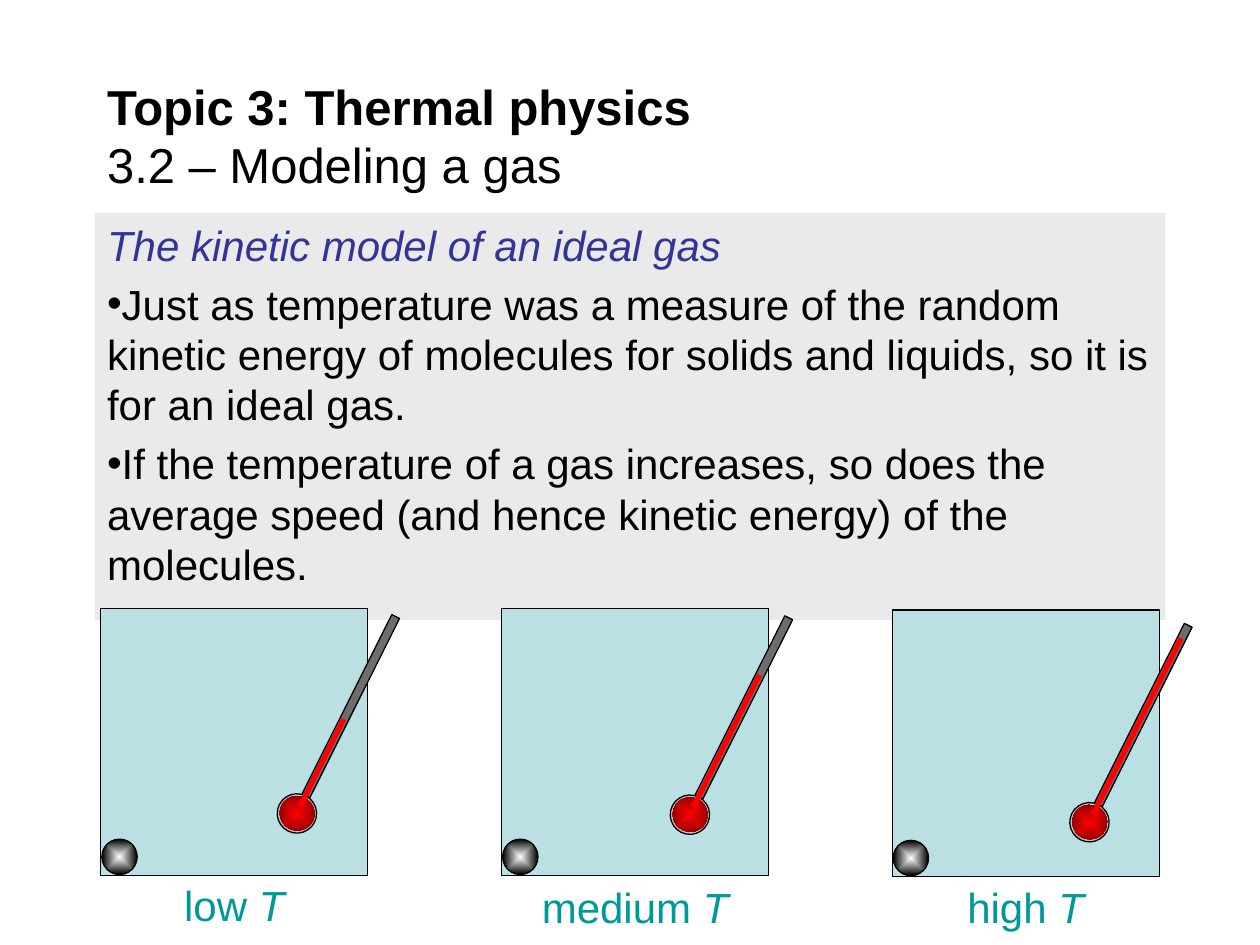
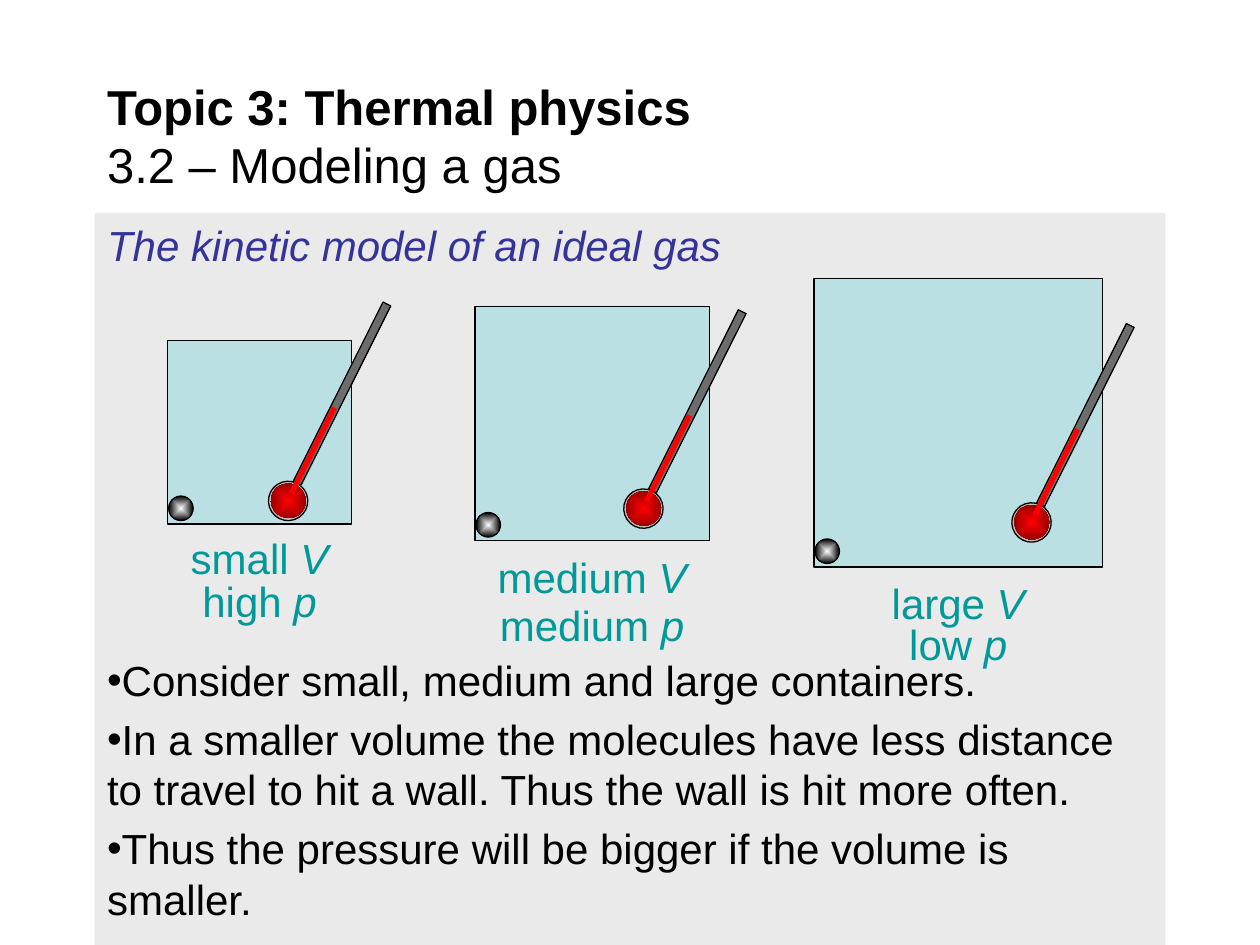
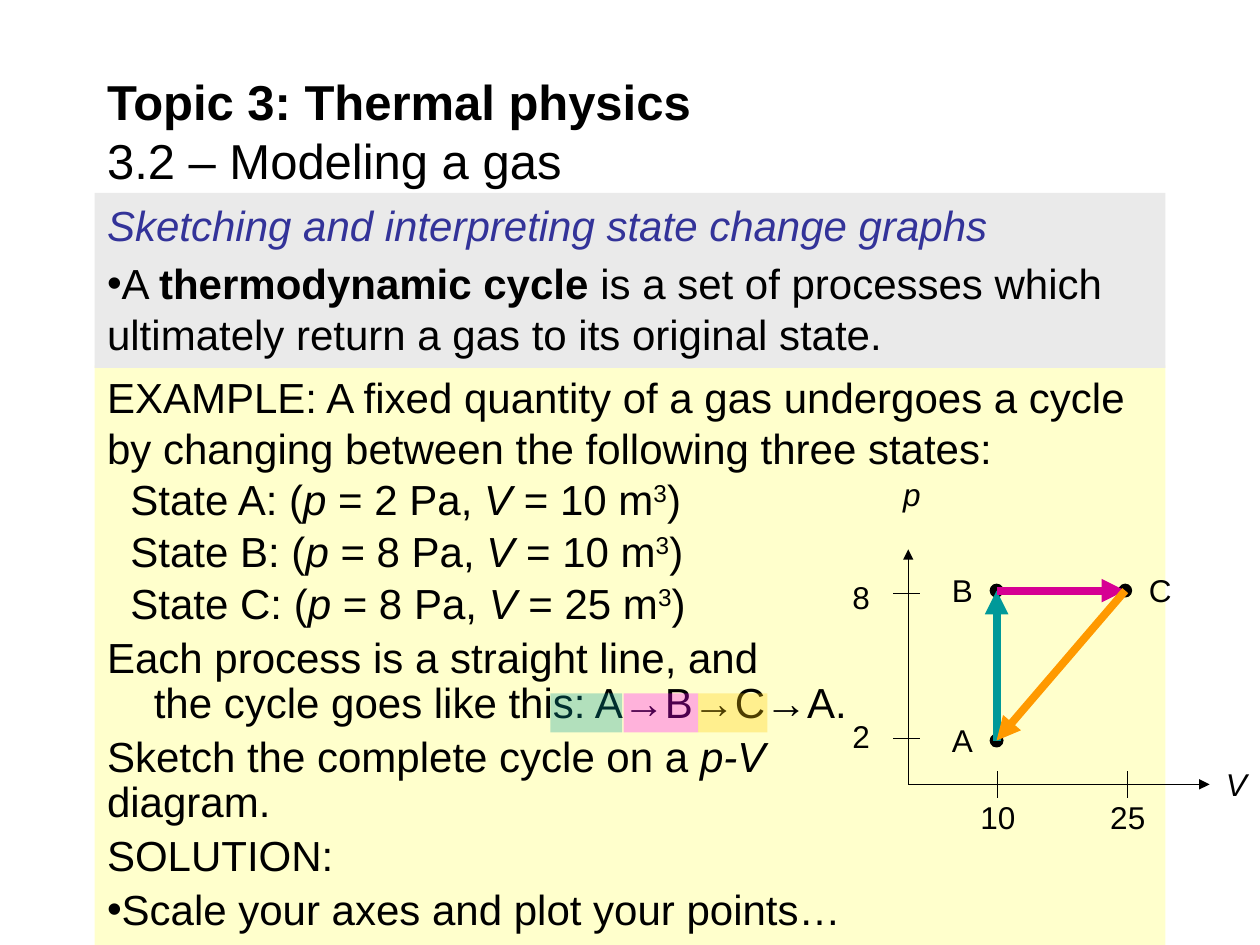
from dataclasses import dataclass

from lxml import etree
from pptx import Presentation
from pptx.dml.color import RGBColor
from pptx.enum.shapes import MSO_CONNECTOR, MSO_SHAPE
from pptx.enum.text import MSO_ANCHOR, MSO_AUTO_SIZE, PP_ALIGN
from pptx.oxml.ns import qn
from pptx.util import Pt

RECTANGLE = MSO_SHAPE.RECTANGLE
OVAL = MSO_SHAPE.OVAL
STRAIGHT = MSO_CONNECTOR.STRAIGHT
LEFT, CENTER = PP_ALIGN.LEFT, PP_ALIGN.CENTER
TOP, MIDDLE = MSO_ANCHOR.TOP, MSO_ANCHOR.MIDDLE
FIXED, GROW = MSO_AUTO_SIZE.NONE, MSO_AUTO_SIZE.SHAPE_TO_FIT_TEXT

BLACK = RGBColor(0x00, 0x00, 0x00)
WHITE = RGBColor(0xFF, 0xFF, 0xFF)
GREY = RGBColor(0xEA, 0xEA, 0xEA)
STEEL = RGBColor(0x6C, 0x6C, 0x6C)
NAVY = RGBColor(0x33, 0x33, 0x99)
TEAL = RGBColor(0x00, 0x99, 0x99)
GAS = RGBColor(0xBB, 0xE0, 0xE3)
RED = RGBColor(0xFF, 0x00, 0x00)
DARK_RED = RGBColor(0x76, 0x00, 0x00)
CREAM = RGBColor(0xFF, 0xFF, 0xCC)
PINK = RGBColor(0xD6, 0x00, 0x93)
ORANGE = RGBColor(0xFF, 0x99, 0x00)
MAGENTA = RGBColor(0xFF, 0x00, 0xFF)
GOLD = RGBColor(0xFF, 0xCC, 0x00)

FONT = "Arial"
BREAK = "\v"
CONTENT_LAYOUT, TWO_CONTENT_LAYOUT = 1, 3
MARGIN, BODY_WIDTH = 54, 612
TITLE_TOP = 41.8
BODY_TOP = 121.7
TILT = 26.6


@dataclass
class Line:
    spans: list
    size: float = 24
    color: RGBColor = BLACK
    align: PP_ALIGN = LEFT
    bullet: bool = False
    margin: float = 0
    indent: float = 0
    before: float = None
    spacing: float = None


def heading(text):
    return Line([(text, "i")], color=NAVY)


def bullet(*spans, **options):
    return Line(list(spans), bullet=True, **options)


def add_span(para, text, style, line):
    span = para.add_run()
    span.text = text
    font = span.font
    font.name, font.size, font.color.rgb = FONT, Pt(line.size), line.color
    font.bold, font.italic = "b" in style, "i" in style
    if "^" in style:
        font._element.set("baseline", "30000")


def write(box, lines):
    frame = box.text_frame
    for number, line in enumerate(lines):
        para = frame.add_paragraph() if number else frame.paragraphs[0]
        para.alignment = line.align
        if line.before is not None:
            para.space_before = Pt(line.before)
        if line.spacing:
            para.line_spacing = line.spacing
        props = para._p.get_or_add_pPr()
        props.set("marL", str(Pt(line.margin)))
        props.set("indent", str(Pt(line.indent)))
        if line.bullet:
            etree.SubElement(props, qn("a:buChar")).set("char", "•")
        else:
            etree.SubElement(props, qn("a:buNone"))
        for item in line.spans:
            text, style = (item, "") if isinstance(item, str) else item
            if text == BREAK:
                para.add_line_break()
            else:
                add_span(para, text, style, line)
        for line_break in para._p.findall(qn("a:br")):
            etree.SubElement(line_break, qn("a:rPr")).set("sz", str(line.size * 100))


def place(box, left, top, width, height):
    box.left, box.top, box.width, box.height = Pt(left), Pt(top), Pt(width), Pt(height)


def add_page(deck, layout, title_height=70.6):
    page = deck.slides.add_slide(deck.slide_layouts[layout])
    title = page.shapes.title
    place(title, MARGIN, TITLE_TOP, BODY_WIDTH, title_height)
    title.text_frame.auto_size = FIXED
    title.text_frame.vertical_anchor = MIDDLE
    write(title, [Line([("Topic 3: Thermal physics", "b"), BREAK,
                        "3.2 – Modeling a gas"], size=28)])
    return page


def fill_body(page, index, top, height, color, lines):
    body = page.placeholders[index]
    place(body, MARGIN, top, BODY_WIDTH, height)
    body.fill.solid()
    body.fill.fore_color.rgb = color
    body.text_frame.auto_size = FIXED
    body.text_frame.vertical_anchor = TOP
    write(body, lines)


def add_label(page, left, top, width, height, line, wrap=False):
    box = page.shapes.add_textbox(Pt(left), Pt(top), Pt(width), Pt(height))
    box.text_frame.word_wrap = wrap
    box.text_frame.auto_size = GROW
    write(box, [line])


def add_figure(shapes, kind, left, top, width, height, color=None, outlined=True):
    figure = shapes.add_shape(kind, Pt(left), Pt(top), Pt(width), Pt(height))
    figure.shadow.inherit = False
    if color is not None:
        figure.fill.solid()
        figure.fill.fore_color.rgb = color
    if outlined:
        figure.line.color.rgb = BLACK
        figure.line.width = Pt(0.75)
    else:
        figure.line.fill.background()
    return figure


def shade(figure, *colors, radial=True):
    figure.fill.background()
    blank = figure._element.spPr.find(qn("a:noFill"))
    gradient = etree.Element(qn("a:gradFill"), rotWithShape="1")
    stops = etree.SubElement(gradient, qn("a:gsLst"))
    for number, color in enumerate(colors):
        position = 100000 * number // (len(colors) - 1)
        stop = etree.SubElement(stops, qn("a:gs"), pos=str(position))
        etree.SubElement(stop, qn("a:srgbClr"), val=str(color))
    if radial:
        route = etree.SubElement(gradient, qn("a:path"))
        route.set("path", "shape")
        etree.SubElement(route, qn("a:fillToRect"), l="50000", t="50000", r="50000", b="50000")
    else:
        etree.SubElement(gradient, qn("a:lin"), ang="0", scaled="1")
    blank.getparent().replace(blank, gradient)


def add_line(page, start, end, color=BLACK, width=0.75, arrow=False):
    line = page.shapes.add_connector(STRAIGHT, *map(Pt, start + end))
    line.line.color.rgb = color
    line.line.width = Pt(width)
    if arrow:
        etree.SubElement(line.line._get_or_add_ln(), qn("a:tailEnd"), type="triangle")
    etree.SubElement(line._element.spPr, qn("a:effectLst"))


def add_container(page, left, top, side, molecule, gap):
    add_figure(page.shapes, RECTANGLE, left, top, side, side, GAS)
    ball = add_figure(page.shapes, OVAL, left + 0.6, top + side - molecule - gap,
                      molecule, molecule)
    shade(ball, WHITE, BLACK)


def add_thermometer(page, left, top, reading):
    parts = page.shapes.add_group_shape().shapes
    bulb = add_figure(parts, OVAL, left, top, 22.5, 22.5)
    shade(bulb, STEEL, GREY)
    stem = add_figure(parts, RECTANGLE, left + 39.6, top - 107.3, 5, 114.5)
    shade(stem, GREY, STEEL, GREY, radial=False)
    liquid = add_figure(parts, OVAL, left + 1.4, top + 1.4, 20, 19.6, outlined=False)
    shade(liquid, RED, DARK_RED)
    for part in (bulb, stem, liquid):
        part.rotation = TILT
    foot = (left + 13.2, top + 7)
    add_line(page, foot, (foot[0] + reading / 2, foot[1] - reading), RED, 3)


def add_caption(page, left, top, width, word, symbol):
    line = Line([word + " ", (symbol, "i")], color=TEAL, align=CENTER)
    add_label(page, left, top, width, 36.6, line, wrap=True)


def temperature_page(deck):
    page = add_page(deck, CONTENT_LAYOUT)
    fill_body(page, 1, BODY_TOP, 232.6, GREY, [
        heading("The kinetic model of an ideal gas"),
        bullet("Just as temperature was a measure of the random kinetic energy of "
               "molecules for solids and liquids, so it is for an ideal gas."),
        bullet("If the temperature of a gas increases, so does the average speed "
               "(and hence kinetic energy) of the molecules."),
    ])
    side = 152.6
    for word, left, top, bulb, reading, caption_top in (
        ("low", 57.6, 347.8, (158.4, 453.6), 49.7, 499),
        ("medium", 286.6, 347.8, (383, 454.3), 75.6, 500.4),
        ("high", 509.8, 348.5, (611.3, 458.6), 100.8, 500.4),
    ):
        add_container(page, left, top, side, 20.2, 0.7)
        add_caption(page, left, caption_top, side, word, "T")
        add_thermometer(page, *bulb, reading)


def volume_page(deck):
    page = add_page(deck, CONTENT_LAYOUT)
    fill_body(page, 1, BODY_TOP, 418.3, GREY, [
        heading("The kinetic model of an ideal gas"),
        bullet("Consider small, medium and large containers.", before=220),
        bullet("In a smaller volume the molecules have less distance to travel "
               "to hit a wall. Thus the wall is hit more often."),
        bullet("Thus the pressure will be bigger if the volume is smaller."),
    ])
    for volume, pressure, left, top, side, bulb, caption_tops in (
        ("small", "high", 95.8, 194.4, 105.1, (153.4, 275), (301, 325.4)),
        ("medium", "medium", 271.4, 175, 133.9, (356.4, 279.4), (311.8, 339.1)),
        ("large", "low", 465.1, 159.1, 164.9, (578.2, 287.3), (326.2, 349.9)),
    ):
        add_caption(page, left, caption_tops[0], side, volume, "V")
        add_caption(page, left, caption_tops[1], side, pressure, "p")
        add_container(page, left, top, side, 14, 2)
        add_thermometer(page, *bulb, 49)


def state_line(name, pressure, volume):
    return Line([f"State {name}: (", ("p", "i"), f" = {pressure} Pa, ", ("V", "i"),
                 f" = {volume} m", ("3", "^"), ")"],
                margin=13.34, before=3.8, spacing=0.9)


def add_graph(page):
    def mark(left, top, width, text, style="", align=CENTER):
        add_label(page, left, top, width, 28.8, Line([(text, style)], size=18, align=align))

    axis_x, axis_y, tick = 519, 448.2, 7.6
    add_line(page, (axis_x, axis_y), (axis_x, 313.9), arrow=True)
    mark(509, 267.8, 24.5, "p", "i", LEFT)
    add_line(page, (axis_x, axis_y), (691.2, axis_y), arrow=True)
    mark(693.4, 433.4, 26.6, "V", "i", LEFT)

    for text, y, label_top in (("2", 421.9, 406.1), ("8", 339.1, 326.9)):
        add_line(page, (axis_x - 1 - tick, y), (axis_x - 1 + tick, y))
        mark(479.9, label_top, 24.5, text)
    for text, x in (("10", 570.2), ("25", 644.4)):
        add_line(page, (x, axis_y + tick), (x, axis_y - tick))
        mark(x - 17.3, 452.2, 34.6, text)

    states = {"A": (569.5, 423.2), "B": (569.5, 337.5), "C": (643, 337.5)}
    dot = 7.2
    for name, (x, y) in states.items():
        add_figure(page.shapes, OVAL, x - dot / 2, y - dot / 2, dot, dot, BLACK)
        mark(x + (6.4 if name == "C" else -32.8), y - 14.8, 26.6, name)
    for start, end, color in (("A", "B", TEAL), ("B", "C", PINK), ("C", "A", ORANGE)):
        add_line(page, states[start], states[end], color, 4.5, arrow=True)


def add_highlight(page, left, width, color):
    patch = add_figure(page.shapes, RECTANGLE, left, 396.2, width, 22.3, color, outlined=False)
    tint = patch._element.spPr.find(qn("a:solidFill"))[0]
    etree.SubElement(tint, qn("a:alpha"), val="30000")


def cycle_page(deck):
    page = add_page(deck, TWO_CONTENT_LAYOUT, title_height=65.5)
    fill_body(page, 1, 208.8, 331.2, CREAM, [
        Line(["EXAMPLE: A fixed quantity of a gas undergoes a cycle by changing "
              "between the following three states:"], before=0),
        state_line("A", 2, 10),
        state_line("B", 8, 10),
        state_line("C", 8, 25),
        Line(["Each process is a straight line, and", BREAK,
              "the cycle goes like this: A→B→C→A."],
             margin=26.7, indent=-26.7, spacing=0.9),
        Line(["Sketch the complete cycle on a ", ("p-V", "i"), BREAK, "diagram."], spacing=0.9),
        Line(["SOLUTION:"], spacing=0.9),
        bullet("Scale your axes and plot your points…", spacing=0.9),
    ])
    fill_body(page, 2, 110.2, 100, GREY, [
        heading("Sketching and interpreting state change graphs"),
        bullet("A ", ("thermodynamic cycle ", "b"),
               "is a set of processes which ultimately return a gas to its original state."),
    ])
    add_graph(page)
    for left, width, color in ((314.6, 41, TEAL), (356.4, 42.5, MAGENTA), (398.9, 39.6, GOLD)):
        add_highlight(page, left, width, color)


def main():
    deck = Presentation()
    deck.slide_width, deck.slide_height = Pt(720), Pt(540)
    temperature_page(deck)
    volume_page(deck)
    cycle_page(deck)
    deck.save("out.pptx")


if __name__ == "__main__":
    main()
